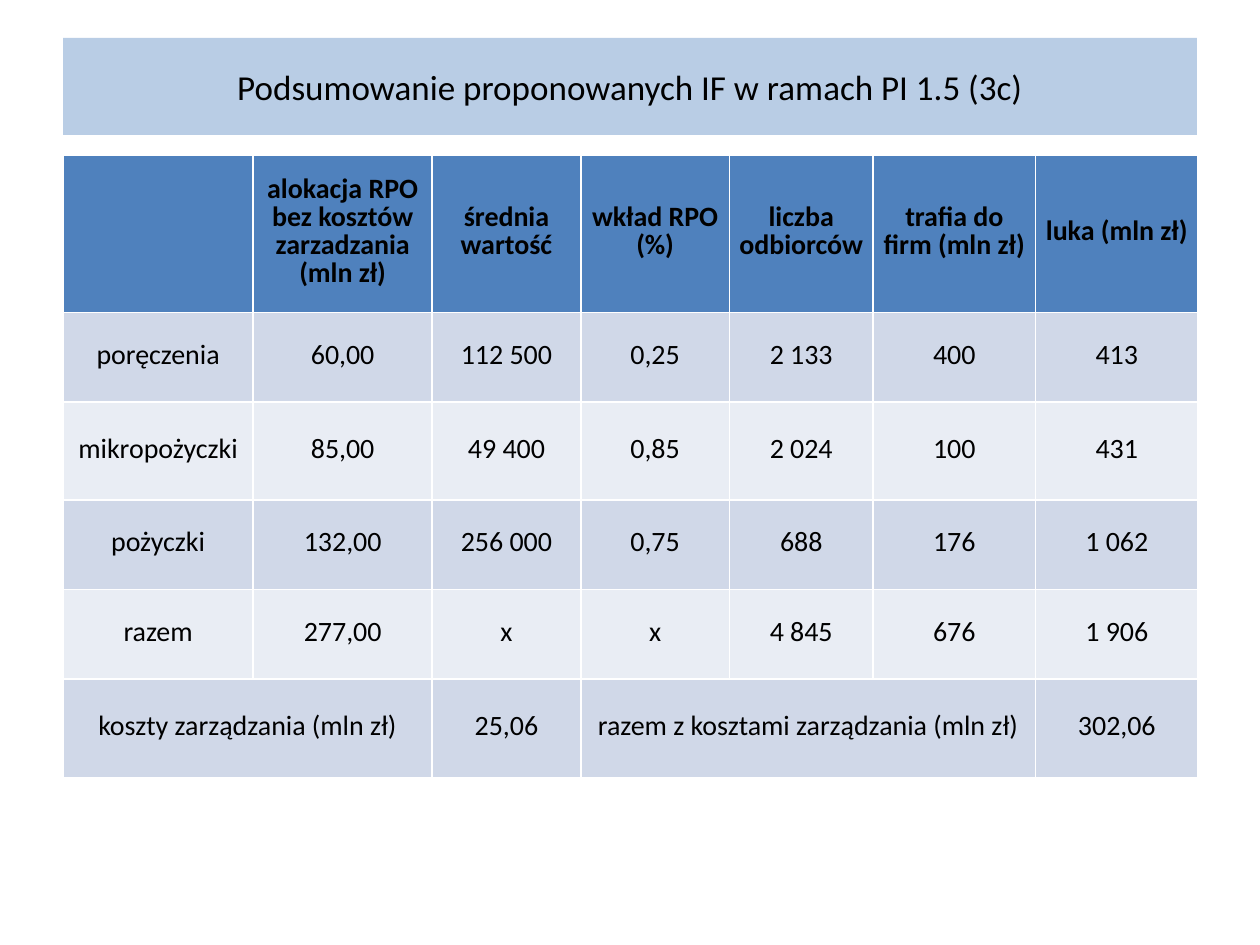
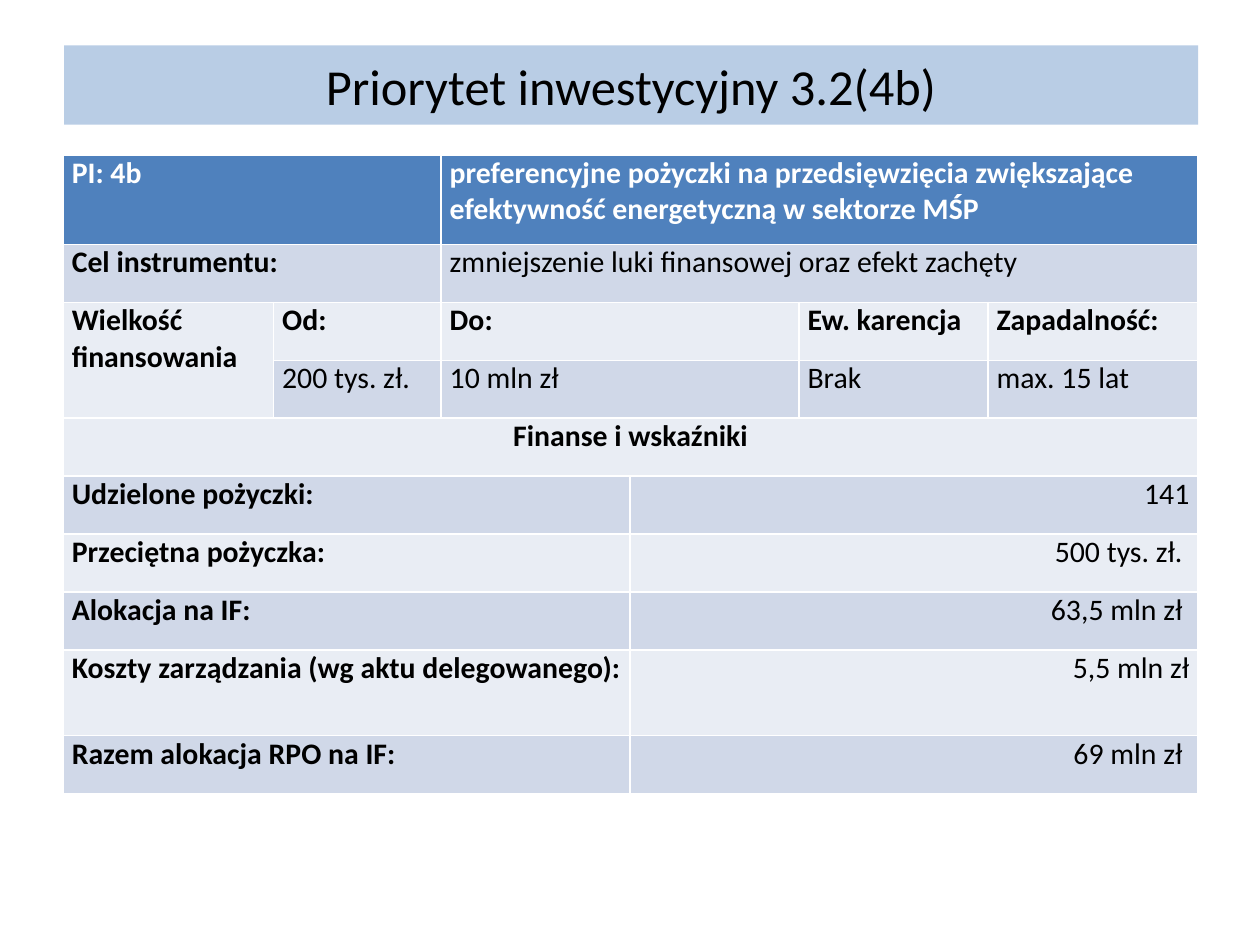
from pptx import Presentation
from pptx.dml.color import RGBColor
from pptx.enum.text import MSO_ANCHOR, MSO_AUTO_SIZE, PP_ALIGN
from pptx.util import Inches, Pt

MID, TOP = MSO_ANCHOR.MIDDLE, MSO_ANCHOR.TOP
FIXED = MSO_AUTO_SIZE.NONE
LEFT, CENTER, RIGHT, FULL = PP_ALIGN.LEFT, PP_ALIGN.CENTER, PP_ALIGN.RIGHT, PP_ALIGN.JUSTIFY

FONT = "Calibri"
BLACK = RGBColor(0x00, 0x00, 0x00)
WHITE = RGBColor(0xFF, 0xFF, 0xFF)
BAND = RGBColor(0xB9, 0xCD, 0xE5)
BLUE = RGBColor(0x4F, 0x81, 0xBD)
DARK = RGBColor(0xD0, 0xD8, 0xE8)
PALE = RGBColor(0xE9, 0xED, 0xF4)

HEAD = (True, CENTER)
CELL = (False, CENTER)
KEY = (True, FULL)
VALUE = (False, FULL)
NAME = (True, LEFT)
GOAL = (False, LEFT)
SUM = (False, RIGHT)

LABELS = ["", "alokacja RPO bez kosztów zarzadzania (mln zł)", "średnia wartość",
          "wkład RPO (%)", "liczba odbiorców", "trafia do firm (mln zł)", "luka (mln zł)"]
LOANS = [
    ["poręczenia", "60,00", "112 500", "0,25", "2 133", "400", "413"],
    ["mikropożyczki", "85,00", "49 400", "0,85", "2 024", "100", "431"],
    ["pożyczki", "132,00", "256 000", "0,75", "688", "176", "1 062"],
    ["razem", "277,00", "x", "x", "4 845", "676", "1 906"],
]
COSTS = [("koszty zarządzania (mln zł)", 2, CELL), ("25,06", 1, CELL),
         ("razem z kosztami zarządzania (mln zł)", 3, CELL), ("302,06", 1, CELL)]
FACTS = [
    ("Udzielone pożyczki:", "141"),
    ("Przeciętna pożyczka:", "500 tys. zł. "),
    ("Alokacja na IF:", "63,5 mln zł "),
    ("Koszty zarządzania (wg aktu delegowanego):", "5,5 mln zł"),
    ("Razem alokacja RPO na IF:", "69 mln zł "),
]

SLIDES = [
    {
        "title": "Podsumowanie proponowanych IF w ramach PI 1.5 (3c)",
        "band": (0.5, 0.3, 9, 0.77), "title_size": 20,
        "cols": [1.51, 1.42, 1.18, 1.18, 1.14, 1.29, 1.29],
        "rows": [1.25, 0.71, 0.78, 0.71, 0.71, 0.78],
        "size": 16, "lead": Pt(16), "anchor": MID, "inset": 0.01, "ink": BLACK,
        "cells": [[(text, 1, HEAD) for text in LABELS]]
        + [[(text, 1, CELL) for text in row] for row in LOANS]
        + [COSTS],
    },
    {
        "title": "Priorytet inwestycyjny 3.2(4b)",
        "band": (0.51, 0.36, 9, 0.63), "title_size": 28.8,
        "cols": [1.67, 1.33, 1.5, 1.34, 1.5, 1.67],
        "rows": [0.71] + [0.46] * 7 + [0.68, 0.46],
        "size": 17, "lead": None, "anchor": TOP, "inset": 0, "ink": WHITE,
        "tall": (2, 0, 3, 0),
        "cells": [
            [("PI: 4b", 2, KEY),
             ("preferencyjne pożyczki na przedsięwzięcia zwiększające "
              "efektywność energetyczną w sektorze MŚP", 4, NAME)],
            [("Cel instrumentu:", 2, KEY),
             ("zmniejszenie luki finansowej oraz efekt zachęty", 4, GOAL)],
            [("Wielkość finansowania", 1, KEY), ("Od:", 1, KEY), ("Do:", 2, KEY),
             ("Ew. karencja", 1, KEY), ("Zapadalność:", 1, KEY)],
            [("", 1, KEY), ("200 tys. zł.", 1, VALUE), ("10 mln zł", 2, VALUE),
             ("Brak", 1, VALUE), ("max. 15 lat", 1, VALUE)],
            [("Finanse i wskaźniki", 6, HEAD)],
        ] + [[(fact, 3, KEY), (value, 3, SUM)] for fact, value in FACTS],
    },
]


def write(para, text, size, ink, bold, align):
    para.alignment = align
    run = para.add_run()
    run.text = text
    font = run.font
    font.name, font.size, font.bold = FONT, Pt(size), bold
    font.color.rgb = ink


def paint(shape, color):
    shape.fill.solid()
    shape.fill.fore_color.rgb = color


def add_title(slide, data):
    title = slide.shapes.title
    title.left, title.top, title.width, title.height = map(Inches, data["band"])
    paint(title, BAND)
    frame = title.text_frame
    frame.auto_size, frame.word_wrap = FIXED, True
    frame.vertical_anchor = MID
    write(frame.paragraphs[0], data["title"], data["title_size"], BLACK, False, CENTER)


def fill_cell(cell, text, style, ink, data):
    cell.vertical_anchor = data["anchor"]
    cell.margin_left = cell.margin_right = Inches(0.07)
    cell.margin_top, cell.margin_bottom = Inches(data["inset"]), 0
    para = cell.text_frame.paragraphs[0]
    para.space_after = Pt(3)
    if data["lead"]:
        para.line_spacing = data["lead"]
    if text:
        write(para, text, data["size"], ink, *style)


def add_grid(slide, data):
    cols, rows = data["cols"], data["rows"]
    frame = slide.shapes.add_table(len(rows), len(cols), Inches(0.5), Inches(1.23),
                                   Inches(9), Inches(sum(rows)))
    table = frame.table
    for col, width in zip(table.columns, cols):
        col.width = Inches(width)
    for row, height in zip(table.rows, rows):
        row.height = Inches(height)
    for y, line in enumerate(data["cells"]):
        color = BLUE if y == 0 else DARK if y % 2 else PALE
        for x in range(len(cols)):
            paint(table.cell(y, x), color)
        x = 0
        for text, span, style in line:
            cell = table.cell(y, x)
            if span > 1:
                cell.merge(table.cell(y, x + span - 1))
            fill_cell(cell, text, style, BLACK if y else data["ink"], data)
            x += span
    if "tall" in data:
        top, left, bottom, right = data["tall"]
        table.cell(top, left).merge(table.cell(bottom, right))


def main():
    deck = Presentation()
    deck.slide_width, deck.slide_height = Inches(10), Inches(7.5)
    for data in SLIDES:
        slide = deck.slides.add_slide(deck.slide_layouts[5])
        add_title(slide, data)
        add_grid(slide, data)
    deck.save("out.pptx")


if __name__ == "__main__":
    main()
